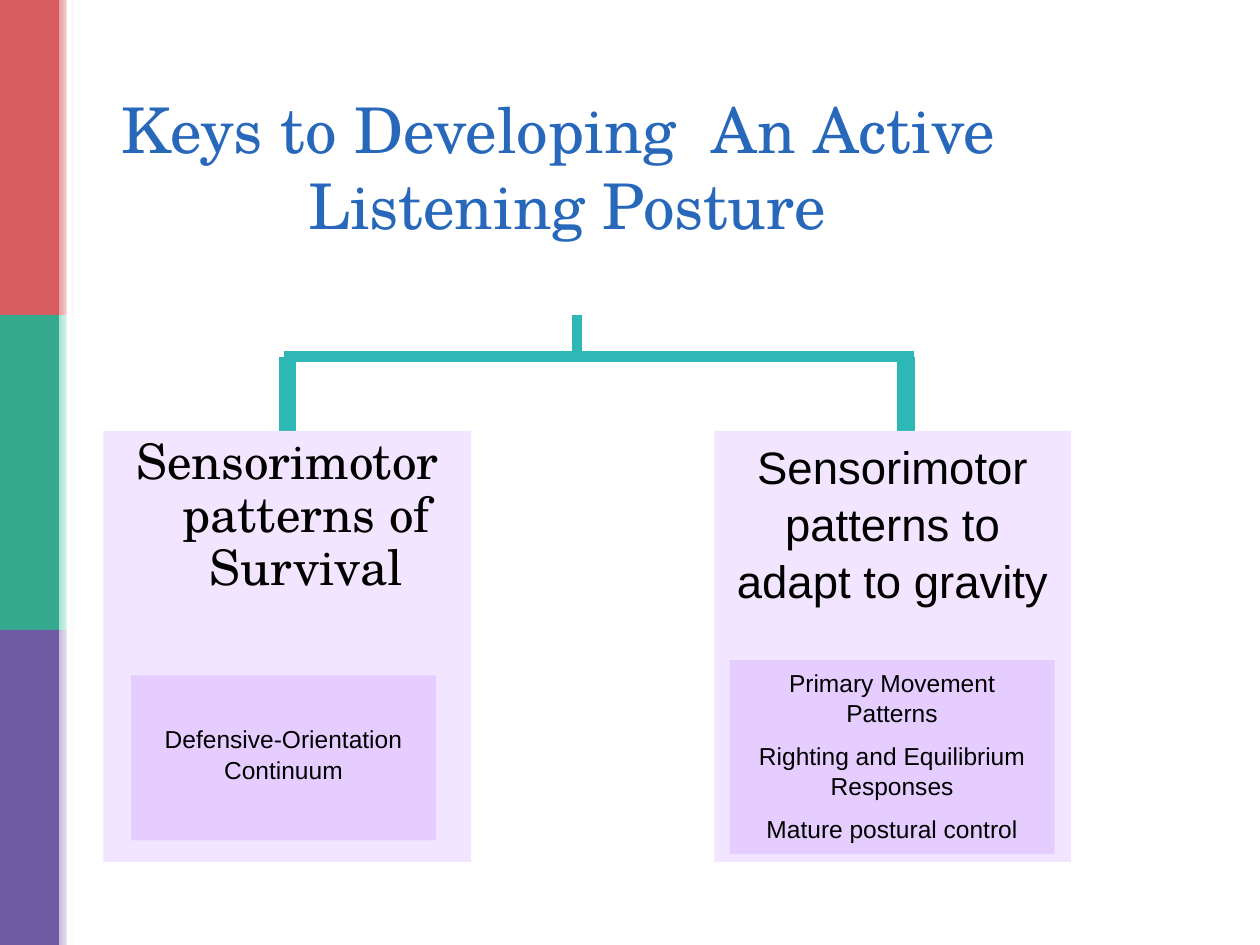
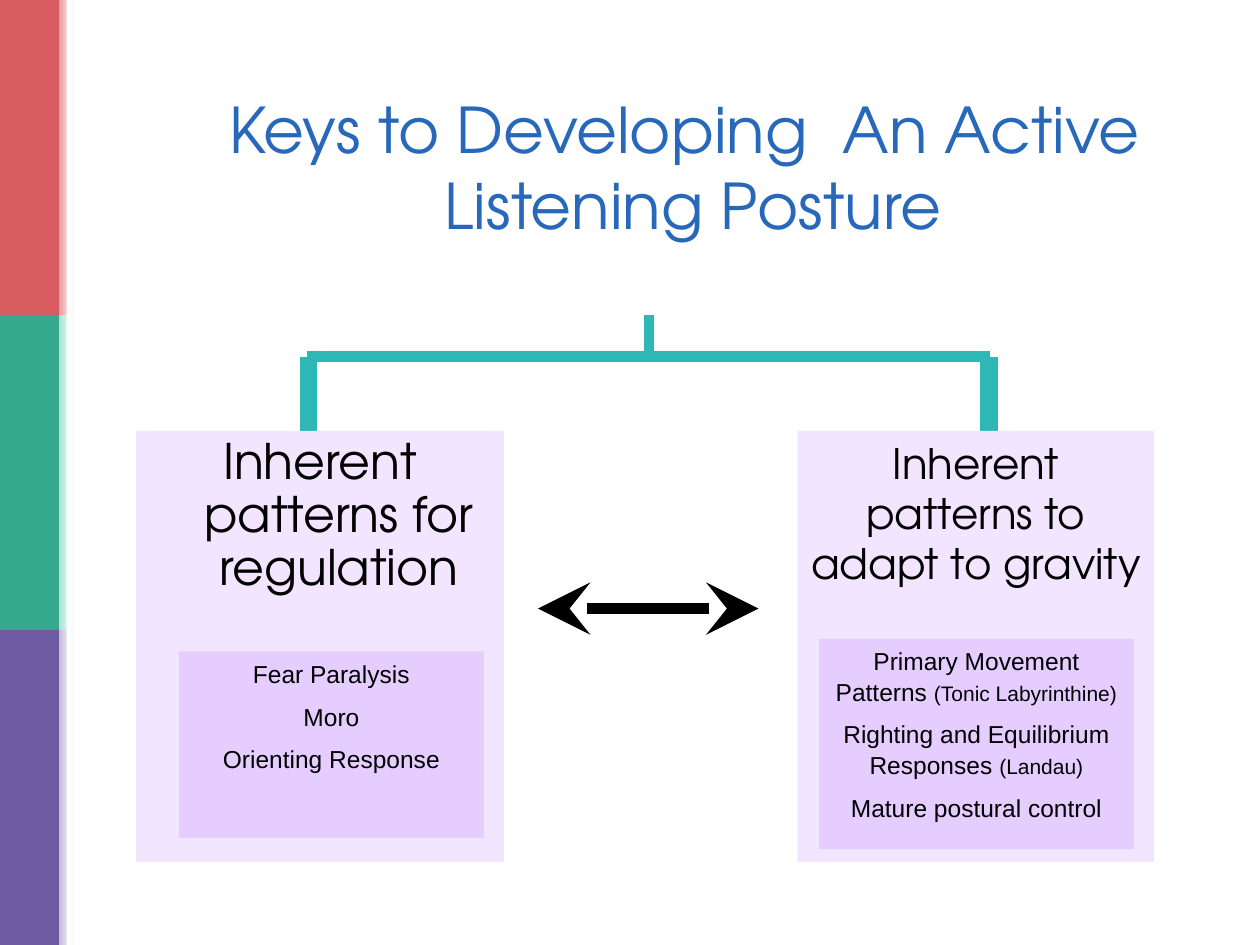
from lxml import etree
from pptx import Presentation
from pptx.dml.color import RGBColor
from pptx.enum.shapes import MSO_CONNECTOR, MSO_SHAPE
from pptx.enum.text import MSO_ANCHOR, PP_ALIGN
from pptx.oxml.ns import qn
from pptx.util import Emu, Inches, Pt

RECT, STRAIGHT = MSO_SHAPE.RECTANGLE, MSO_CONNECTOR.STRAIGHT
CENTER, TOP = PP_ALIGN.CENTER, MSO_ANCHOR.TOP

# Content: lengths in inches; a paragraph is a list of (text, size name) runs
TITLE = "Keys to Developing  An Active  Listening Posture"
MOVEMENT, RIGHTING, MATURE = ("Primary Movement Patterns",
                              "Righting and Equilibrium Responses",
                              "Mature postural control")
SLIDES = [
    {
        "font": "serif", "title_left": 0,
        "stem": 4.58, "bar": (2.25, 7.25), "drops": (2.28, 7.19),
        "cards": [
            {"left": 0.82, "heading": "Sensorimotor patterns of Survival",
             "style": "hanging", "font": "serif",
             "detail_at": (1.04, 5.36, 2.42, 1.31), "detail_inset": 0.38,
             "details": [[("Defensive-Orientation Continuum", "detail")]]},
            {"left": 5.67, "heading": "Sensorimotor patterns to adapt to gravity",
             "style": "plain", "font": "plain",
             "detail_at": (5.79, 5.24, 2.58, 1.54),
             "details": [[(line, "detail")] for line in (MOVEMENT, RIGHTING, MATURE)]},
        ],
    },
    {
        "font": "geometric", "title_left": 1,
        "stem": 5.15, "bar": (2.44, 7.86), "drops": (2.45, 7.85),
        "exchange": (4.27, 6.02, 4.83),
        "cards": [
            {"left": 1.08, "heading": "Inherent patterns for regulation",
             "style": "hanging", "font": "geometric",
             "detail_at": (1.42, 5.17, 2.42, 1.48),
             "details": [[(line, "detail")]
                         for line in ("Fear Paralysis", "Moro", "Orienting Response")]},
            {"left": 6.33, "heading": "Inherent patterns to adapt to gravity",
             "style": "compact", "font": "geometric",
             "detail_at": (6.5, 5.07, 2.5, 1.67),
             "details": [[(MOVEMENT + " ", "detail"), ("(Tonic Labyrinthine)", "aside")],
                         [(RIGHTING + " ", "detail"), ("(Landau)", "aside")],
                         [(MATURE, "detail")]]},
        ],
    },
]

# Theme
THEME = {
    "colors": {"title": "2768BB", "text": "000000", "tree": "2DB8B5",
               "card": "F2E5FF", "detail": "E6CDFF", "paper": "FFFFFF"},
    "bands": [("D85B5F", "E89D9F"), ("35AA8E", "A7E4D5"), ("6F5BA3", "C5BDDA")],
    "fonts": {"serif": "TeX Gyre Schola", "geometric": "TeX Gyre Adventor",
              "plain": "Arial"},
    "sizes": {"title": 36, "hanging": 28, "plain": 26, "compact": 24,
              "detail": 14, "aside": 12},
}
CARD_WIDTHS = {"hanging": 2.92, "plain": 2.83, "compact": 2.83}
LINE_SPACING = {"hanging": 0.9, "plain": 1.04, "detail": 1.04}
HANGING_INDENT = Inches(0.3)
WIDTH, HEIGHT = 10, 7.5
BAND_WIDTH, FADE_WIDTH = 0.47, 0.12
TITLE_BOX = (0.67, 9, 1.25)
STEM_TOP, BAR_Y, CARD_TOP, CARD_HEIGHT = 2.5, 2.83, 3.42, 3.42
BAR_WEIGHT, DROP_WEIGHT = 6, 10


def color(name):
    return RGBColor.from_string(THEME["colors"].get(name, name))


def apply_format(target, **values):
    for attribute, value in values.items():
        setattr(target, attribute, value)


def add_block(slide, at, fill):
    block = slide.shapes.add_shape(RECT, *map(Inches, at))
    block.shadow.inherit = False
    block.line.fill.background()
    block.fill.solid()
    block.fill.fore_color.rgb = color(fill)
    return block


def write(shape, paragraphs, font, style, ink="text", top_inset=0.05):
    frame = shape.text_frame
    apply_format(frame, word_wrap=True, vertical_anchor=TOP,
                 margin_left=Inches(0.1), margin_right=Inches(0.1),
                 margin_top=Inches(top_inset), margin_bottom=Inches(0.05))
    for index, runs in enumerate(paragraphs):
        paragraph = frame.add_paragraph() if index else frame.paragraphs[0]
        apply_format(paragraph, alignment=CENTER,
                     line_spacing=LINE_SPACING.get(style),
                     space_before=Pt(7 if index else 0))
        if style == "hanging":
            properties = paragraph._p.get_or_add_pPr()
            properties.set("marL", str(HANGING_INDENT))
            properties.set("indent", str(-HANGING_INDENT))
        for text, size in runs:
            run = paragraph.add_run()
            run.text = text
            apply_format(run.font, name=THEME["fonts"][font],
                         size=Pt(THEME["sizes"][size]))
            run.font.color.rgb = color(ink)


def add_line(slide, start, end, ink, weight, arrows=()):
    line = slide.shapes.add_connector(STRAIGHT, *map(Inches, start + end))
    line.line.color.rgb = color(ink)
    line.line.width = Pt(weight)
    outline = line.line._get_or_add_ln()
    for arrow in arrows:
        etree.SubElement(outline, qn(arrow), type="stealth", w="lg", len="lg")
    etree.SubElement(line._element.spPr, qn("a:effectLst"))


def add_side_bands(slide):
    band_height = HEIGHT / len(THEME["bands"])
    for row, (solid, pale) in enumerate(THEME["bands"]):
        top = row * band_height
        add_block(slide, (0, top, BAND_WIDTH, band_height), solid)
        fade = add_block(slide, (BAND_WIDTH, top, FADE_WIDTH, band_height), pale)
        fade.fill.gradient()
        fade.fill.gradient_angle = 0
        for stop, (position, tint) in zip(fade.fill.gradient_stops,
                                          ((0, pale), (1, "paper"))):
            stop.position = position
            stop.color.rgb = color(tint)
    add_block(slide, (0.53, 0, 0.04, HEIGHT), "paper")


def add_tree(slide, content):
    stem, (bar_start, bar_end) = content["stem"], content["bar"]
    add_line(slide, (stem, STEM_TOP), (stem, BAR_Y), "tree", BAR_WEIGHT)
    add_line(slide, (bar_start, BAR_Y), (bar_end, BAR_Y), "tree", BAR_WEIGHT)
    for drop in content["drops"]:
        add_line(slide, (drop, BAR_Y), (drop, CARD_TOP), "tree", DROP_WEIGHT)


def add_card(slide, card):
    style = card["style"]
    panel = add_block(slide, (card["left"], CARD_TOP, CARD_WIDTHS[style], CARD_HEIGHT),
                      "card")
    write(panel, [[(card["heading"], style)]], card["font"], style)
    detail = add_block(slide, card["detail_at"], "detail")
    write(detail, card["details"], "plain", "detail",
          top_inset=card.get("detail_inset", 0.05))


def build_slide(deck, content):
    slide = deck.slides.add_slide(deck.slide_layouts[6])
    add_side_bands(slide)
    title = slide.shapes.add_textbox(
        *map(Inches, (content["title_left"],) + TITLE_BOX))
    write(title, [[(TITLE, "title")]], content["font"], "title", ink="title")
    add_tree(slide, content)
    for card in content["cards"]:
        add_card(slide, card)
    # Two-way arrow between the cards
    if "exchange" in content:
        start, end, y = content["exchange"]
        add_line(slide, (start, y), (end, y), "text", BAR_WEIGHT,
                 arrows=("a:headEnd", "a:tailEnd"))


def main():
    deck = Presentation()
    apply_format(deck, slide_width=Emu(Inches(WIDTH)), slide_height=Emu(Inches(HEIGHT)))
    for content in SLIDES:
        build_slide(deck, content)
    deck.save("out.pptx")


if __name__ == "__main__":
    main()
